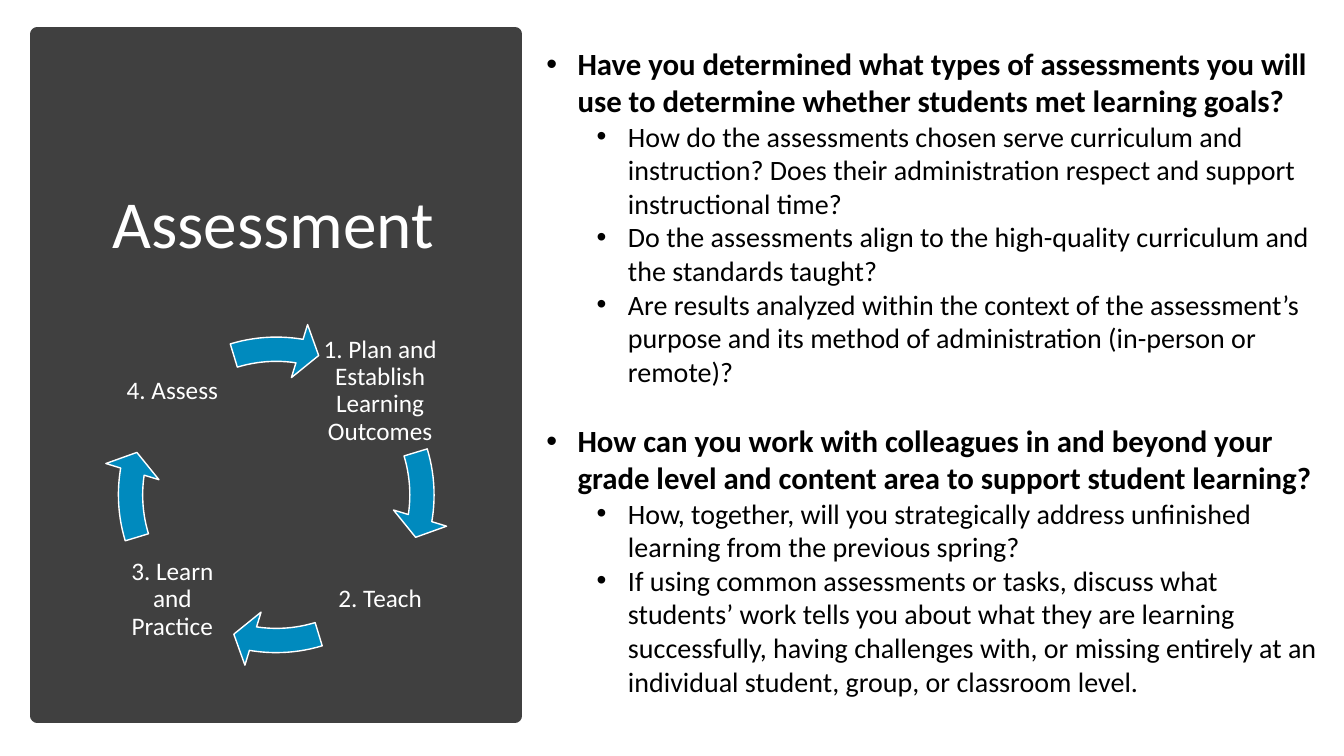
from pptx import Presentation
from pptx import util as u
from pptx.dml.color import RGBColor
from pptx.enum import shapes, text
from pptx.oxml import parse_xml
from pptx.oxml.ns import nsdecls

WIDE, HIGH = u.Inches(13.33), u.Inches(7.5)
FONT = "Calibri"
WHITE = RGBColor(0xFF, 0xFF, 0xFF)
BLACK = RGBColor(0x00, 0x00, 0x00)
GRAY = RGBColor(0x40, 0x40, 0x40)
BLUE = RGBColor(0x00, 0x8A, 0xBE)

# Places are left, top, width, height in percent of the slide.
PANEL = (2.78, 4.53, 35.56, 90.13)
TITLE = (6.08, 10.8, 28.51, 38.4)
BODY = (39.91, 5.33, 58.96, 88.4)
RING = (7.65, 42.53, 25.81, 45.87)
LEFT, RIGHT, UPPER, LOWER = 8.25, 23.71, 43.6, 71.2
CELL = (9.15, 16.27)

# Angles are in units of 100000 / 60000 degree.
TURN, QUARTER = 216, 54
STEPS = [
    ("1. Plan and Establish Learning Outcomes", RIGHT, UPPER),
    ("2. Teach", RIGHT, LOWER),
    ("3. Learn and Practice", LEFT, LOWER),
    ("4. Assess", LEFT, UPPER),
]

TOPICS = [
    ("Have you determined what types of assessments you will use to "
     "determine whether students met learning goals?",
     ["How do the assessments chosen serve curriculum and instruction? Does "
      "their administration respect and support instructional time?",
      "Do the assessments align to the high-quality curriculum and the "
      "standards taught?",
      "Are results analyzed within the context of the assessment’s purpose "
      "and its method of administration (in-person or remote)?"]),
    ("How can you work with colleagues in and beyond your grade level and "
     "content area to support student learning?",
     ["How, together, will you strategically address unfinished learning "
      "from the previous spring?",
      "If using common assessments or tasks, discuss what students’ work "
      "tells you about what they are learning successfully, having "
      "challenges with, or missing entirely at an individual student, "
      "group, or classroom level."]),
]


def share(place):
    """Turn percent of the slide into lengths."""
    return [int(part * side / 100)
            for part, side in zip(place, (WIDE, HIGH, WIDE, HIGH))]


def style(item, **values):
    for name, value in values.items():
        setattr(item, name, value)


def write(para, words, size, color, bold=False):
    para.text = words
    style(para.font, name=FONT, size=u.Pt(size), bold=bold)
    para.font.color.rgb = color


def center(frame, words, size):
    style(frame, word_wrap=True, vertical_anchor=text.MSO_ANCHOR.MIDDLE)
    para = frame.paragraphs[0]
    style(para, alignment=text.PP_ALIGN.CENTER, line_spacing=0.9)
    write(para, words, size, WHITE)


def paint(shape, fill, line, width):
    shape.shadow.inherit = False
    shape.fill.solid()
    shape.fill.fore_color.rgb = fill
    shape.line.color.rgb = line
    shape.line.width = u.Pt(width)


def add_title(slide):
    title = slide.shapes.title
    style(title, **dict(zip(("left", "top", "width", "height"), share(TITLE))))
    title.text_frame.auto_size = text.MSO_AUTO_SIZE.NONE
    center(title.text_frame, "Assessment", 48)


def add_panel(slide):
    panel = slide.shapes.add_shape(shapes.MSO_SHAPE.RECTANGLE, *share(PANEL))
    paint(panel, GRAY, GRAY, 10)
    tree = slide.shapes.title.element.getparent()
    tree.remove(panel.element)
    slide.shapes.title.element.addprevious(panel.element)


def add_label(group, words, left, top):
    box = group.shapes.add_textbox(*share((left, top, *CELL)))
    edge = u.Inches(0.03)
    style(box.text_frame, margin_left=edge, margin_right=edge,
          margin_top=edge, margin_bottom=edge)
    center(box.text_frame, words, 18)


def add_arrow(group, index):
    """Draw one arc of the ring, a quarter turn on from the last."""
    arrow = group.shapes.add_shape(
        shapes.MSO_SHAPE.CIRCULAR_ARROW, *share(RING))
    turn = index * QUARTER
    values = (0.07, 4.65, 5.51 + turn, (205.84 + turn) % TURN, 0.08)
    for spot, value in enumerate(values):
        arrow.adjustments[spot] = value
    paint(arrow, BLUE, WHITE, 1)


def add_cycle(slide):
    group = slide.shapes.add_group_shape()
    for index, step in enumerate(STEPS):
        add_label(group, *step)
        add_arrow(group, index)


def add_bullet(para, words, level, gap=0):
    para.level = level
    para.space_before = u.Pt(gap)
    props = para._p.get_or_add_pPr()
    props.set("marL", str(u.Inches(0.31 + 0.5 * level)))
    props.set("indent", str(u.Inches(-0.31)))
    props.append(parse_xml(f'<a:buFont {nsdecls("a")} typeface="Arial"/>'))
    props.append(parse_xml(f'<a:buChar {nsdecls("a")} char="•"/>'))
    write(para, words, 20 if level else 22, BLACK, bold=not level)


def add_body(slide):
    frame = slide.shapes.add_textbox(*share(BODY)).text_frame
    style(frame, word_wrap=True,
          auto_size=text.MSO_AUTO_SIZE.SHAPE_TO_FIT_TEXT)
    for index, (topic, points) in enumerate(TOPICS):
        para = frame.add_paragraph() if index else frame.paragraphs[0]
        add_bullet(para, topic, 0, gap=24.4 * index)
        for point in points:
            add_bullet(frame.add_paragraph(), point, 1)


def main():
    deck = Presentation()
    style(deck, slide_width=WIDE, slide_height=HIGH)
    slide = deck.slides.add_slide(deck.slide_layouts[5])
    add_panel(slide)
    add_title(slide)
    add_body(slide)
    add_cycle(slide)
    deck.save("out.pptx")


if __name__ == "__main__":
    main()
